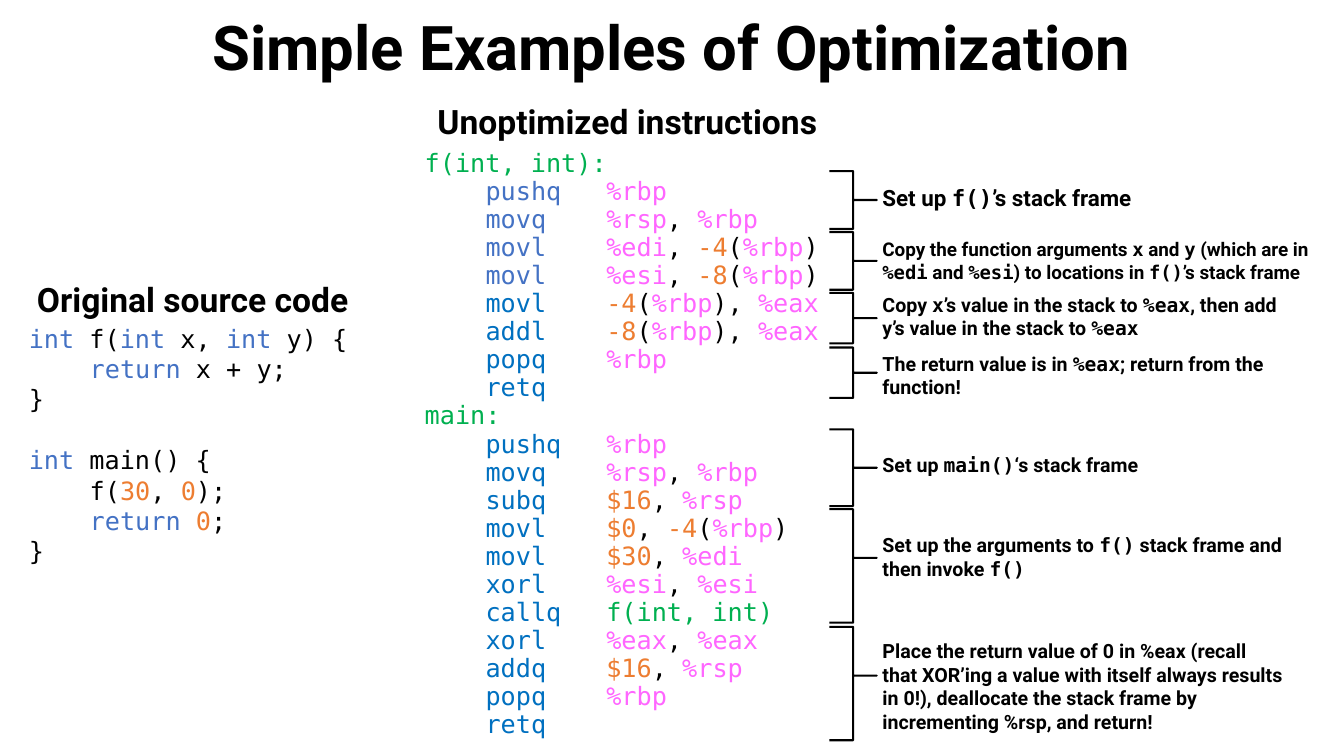
from dataclasses import dataclass
from itertools import groupby

from pptx import Presentation
from pptx.dml.color import RGBColor
from pptx.enum.shapes import MSO_SHAPE as Preset
from pptx.enum.text import MSO_ANCHOR as Anchor, PP_ALIGN as Align
from pptx.util import Pt

SCALE = 9525


@dataclass(frozen=True)
class Theme:
    sans: str = "Roboto"
    mono: str = "DejaVu Sans Mono"
    plain: str = "000000"
    keyword: str = "4472C4"
    mnemonic: str = "0070C0"
    label: str = "00B050"
    register: str = "FF66FF"
    number: str = "ED7D31"
    title_size: float = 44
    heading_size: float = 24
    code_size: float = 18
    code_leading: float = 20
    blank_line: float = 22
    lead_note_size: float = 16
    dense_note_size: float = 13.5
    note_size: float = 14
    brace_width: float = 1.5


THEME = Theme()
CODE_INDENT, OPERAND_COLUMN = 58, 173

SOURCE = (
    (0, 0, "int f(int x, int y) {"),
    (1, 0, "return x + y;"),
    (0, 0, "}"),
    (0, THEME.blank_line, "int main() {"),
    (1, 0, "f(30, 0);"),
    (1, 0, "return 0;"),
    (0, 0, "}"),
)

ASSEMBLY = (
    (THEME.label, ("f(int, int):",)),
    (THEME.keyword, ("pushq %rbp", "movq %rsp, %rbp", "movl %edi, -4(%rbp)",
                     "movl %esi, -8(%rbp)")),
    (THEME.mnemonic, ("movl -4(%rbp), %eax", "addl -8(%rbp), %eax",
                      "popq %rbp", "retq")),
    (THEME.label, ("main:",)),
    (THEME.mnemonic, ("pushq %rbp", "movq %rsp, %rbp", "subq $16, %rsp",
                      "movl $0, -4(%rbp)", "movl $30, %edi", "xorl %esi, %esi",
                      "callq f(int, int)", "xorl %eax, %eax", "addq $16, %rsp",
                      "popq %rbp", "retq")),
)

NOTES = (
    (163, 55, 0.5, 171, 401, THEME.lead_note_size, "Set up `f()`’s stack frame"),
    (221, 55, 0.5, 222, 449, THEME.dense_note_size,
     "Copy the function arguments `x` and `y` (which are in `%edi` and `%esi`) "
     "to locations in `f()`’s stack frame"),
    (279, 48, 0.5, 274, 401, THEME.note_size,
     "Copy `x`’s value in the stack to `%eax`, then add y’s value in the stack to `%eax`"),
    (331, 48, 0.5, 330, 401, THEME.note_size,
     "The return value is in `%eax`; return from the function!"),
    (409, 73, 0.5, 427, 401, THEME.note_size, "Set up `main()`‘s stack frame"),
    (485, 108, 0.43, 503, 401, THEME.note_size,
     "Set up the arguments to `f()` stack frame and then invoke `f()`"),
    (597, 108, 0.43, 604, 401, THEME.note_size,
     "Place the return value of 0 in %eax (recall that XOR’ing a value with itself "
     "always results in 0!), deallocate the stack frame by incrementing %rsp, and return!"),
)


def px(length):
    return round(length * SCALE)


def apply_format(target, values):
    for name, value in values.items():
        setattr(target, name, value)


def add_text_frame(slide, box, **values):
    frame = slide.shapes.add_textbox(*map(px, box)).text_frame
    apply_format(frame, {"word_wrap": True, **values})
    return frame


def next_paragraph(frame, **values):
    first = frame.paragraphs[0]
    paragraph = frame.add_paragraph() if first.runs else first
    apply_format(paragraph, values)
    return paragraph


def add_run(paragraph, text, font, size, color=THEME.plain, bold=False):
    run = paragraph.add_run()
    run.text = text
    apply_format(run.font, {"name": font, "size": Pt(size), "bold": bold})
    run.font.color.rgb = RGBColor.from_string(color)


def set_indent(paragraph, margin, first_line=0):
    properties = paragraph._p.get_or_add_pPr()
    properties.set("marL", str(px(margin)))
    properties.set("indent", str(px(first_line)))


def token_color(token):
    if token in ("int", "return"):
        return THEME.keyword
    if token[0] == "%":
        return THEME.register
    if token[0] in "$-" or token.isdigit():
        return THEME.number
    return THEME.plain


def add_code(paragraph, code, color=None):
    tokens = [code] if color else [
        "".join(group)
        for _, group in groupby(code, lambda char: char.isalnum() or char in "%$-")
    ]
    for token in tokens:
        add_run(paragraph, token, THEME.mono, THEME.code_size, color or token_color(token))


def add_heading(slide, box, text, size, **values):
    frame = add_text_frame(slide, box, vertical_anchor=Anchor.MIDDLE)
    paragraph = next_paragraph(frame, alignment=Align.CENTER, **values)
    add_run(paragraph, text, THEME.sans, size, bold=True)


def add_source_panel(slide, left, top, width, height):
    add_heading(slide, (left - 2, top, width, 48), "Original source code", THEME.heading_size)
    frame = add_text_frame(slide, (left, top + 42, width, height - 42))
    for level, gap, code in SOURCE:
        paragraph = next_paragraph(frame, space_before=Pt(gap))
        set_indent(paragraph, level * CODE_INDENT)
        add_code(paragraph, code)


def add_assembly_panel(slide, left, top, width, height):
    add_heading(slide, (left - 46, top, width + 89, 48), "Unoptimized instructions",
                THEME.heading_size)
    frame = add_text_frame(slide, (left, top + 47, width, height - 47))
    for color, lines in ASSEMBLY:
        for line in lines:
            paragraph = next_paragraph(frame, line_spacing=Pt(THEME.code_leading))
            if color == THEME.label:
                add_code(paragraph, line, color)
                continue
            set_indent(paragraph, OPERAND_COLUMN, CODE_INDENT - OPERAND_COLUMN)
            mnemonic, _, operands = line.partition(" ")
            add_code(paragraph, mnemonic + "\t" if operands else mnemonic, color)
            if operands:
                add_code(paragraph, operands, THEME.label if mnemonic == "callq" else None)


def add_brace(slide, box, tip):
    brace = slide.shapes.add_shape(Preset.RIGHT_BRACE, *map(px, box))
    brace.shadow.inherit = False
    brace.fill.background()
    brace.line.color.rgb = RGBColor.from_string(THEME.plain)
    brace.line.width = Pt(THEME.brace_width)
    brace.adjustments[0] = 0
    brace.adjustments[1] = tip


def add_notes(slide, left):
    for brace_top, brace_height, tip, top, width, size, note in NOTES:
        add_brace(slide, (left, brace_top, 45, brace_height), tip)
        frame = add_text_frame(slide, (left + 41, top, width, brace_height))
        paragraph = next_paragraph(frame)
        for index, part in enumerate(note.split("`")):
            if part:
                add_run(paragraph, part, THEME.mono if index % 2 else THEME.sans, size, bold=True)


def main():
    presentation = Presentation()
    apply_format(presentation, {"slide_width": px(1280), "slide_height": px(720)})
    slide = presentation.slides.add_slide(presentation.slide_layouts[6])
    add_heading(slide, (88, -1, 1104, 99), "Simple Examples of Optimization",
                THEME.title_size, line_spacing=0.9)
    add_source_panel(slide, 18, 261, 335, 284)
    add_assembly_panel(slide, 395, 91, 408, 621)
    add_notes(slide, 790)
    presentation.save("out.pptx")


if __name__ == "__main__":
    main()
